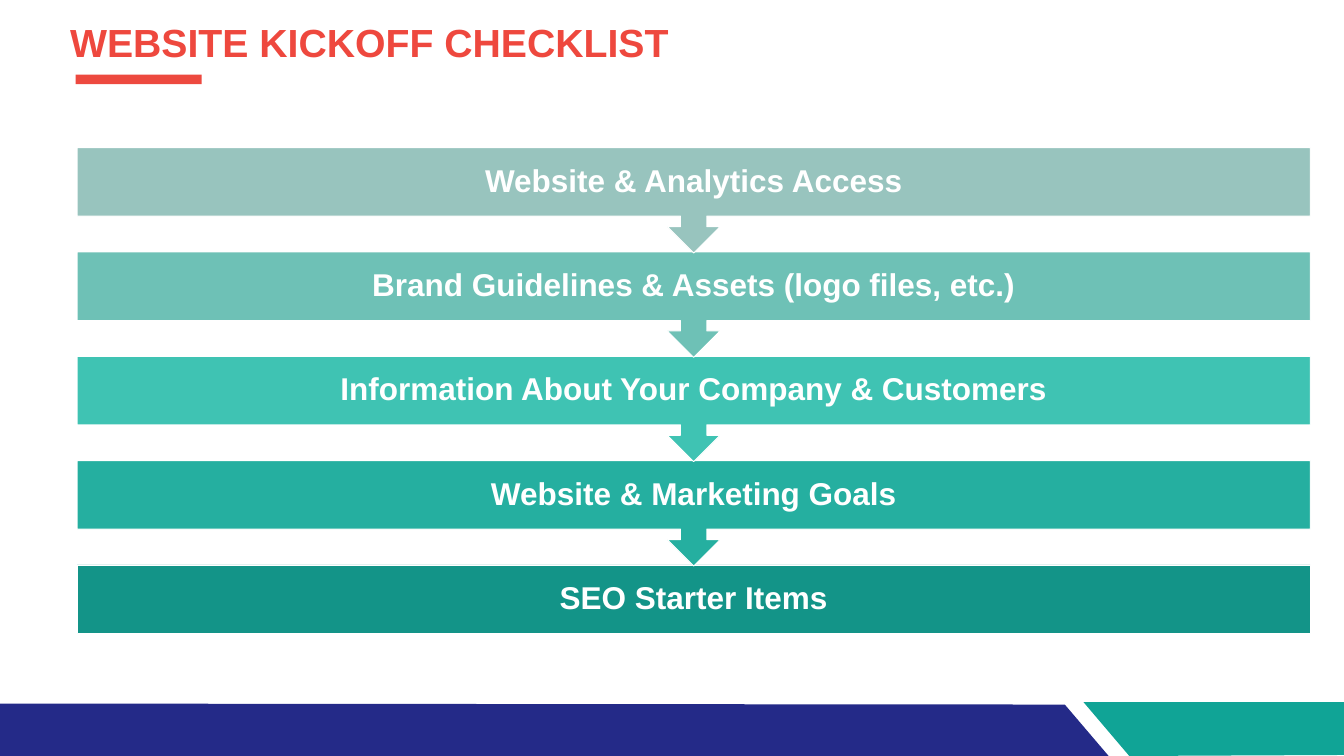
from pptx import Presentation
from pptx import util as u
from pptx.dml.color import RGBColor
from pptx.enum import shapes, text

WHITE = "FFFFFF"
RED = "ED493F"
NAVY = "242A88"
TEAL = "10A496"


def color(hex_value):
    return RGBColor.from_string(hex_value)


class Deck:
    """Holds the style and the current slide."""

    font = "Arial"

    def __init__(self, width, height):
        self.prs = Presentation()
        self.prs.slide_width = u.Inches(width)
        self.prs.slide_height = u.Inches(height)
        self.s = self.prs.slides.add_slide(self.prs.slide_layouts[5])

    def paint(self, sp, fill, line=None):
        sp.shadow.inherit = False
        sp.fill.solid()
        sp.fill.fore_color.rgb = color(fill)
        if line:
            sp.line.color.rgb = color(line)
            sp.line.width = u.Pt(1.25)
        else:
            sp.line.fill.background()

    def label(self, sp, words, size, ink, align):
        tf = sp.text_frame
        tf.text = words
        tf.word_wrap = True
        tf.auto_size = text.MSO_AUTO_SIZE.NONE
        tf.vertical_anchor = text.MSO_ANCHOR.MIDDLE
        p = tf.paragraphs[0]
        p.alignment = align
        p.line_spacing = 0.9
        r = p.runs[0]
        r.font.name = self.font
        r.font.size = u.Pt(size)
        r.font.bold = True
        r.font.color.rgb = color(ink)

    def title(self, words, left, top, width, height):
        sp = self.s.shapes.title
        sp.left, sp.top = u.Inches(left), u.Inches(top)
        sp.width, sp.height = u.Inches(width), u.Inches(height)
        self.label(sp, words, 56, "EE483E", text.PP_ALIGN.LEFT)
        sp.text_frame.margin_left = 0

    def shape(self, kind, left, top, width, height, fill, line=None):
        box = [u.Inches(v) for v in (left, top, width, height)]
        sp = self.s.shapes.add_shape(kind, *box)
        self.paint(sp, fill, line)
        return sp

    def polygon(self, points, fill):
        start, *rest = [(u.Inches(x), u.Inches(y)) for x, y in points]
        builder = self.s.shapes.build_freeform(*start)
        builder.add_line_segments(rest, close=True)
        self.paint(builder.convert_to_shape(), fill)

    def step(self, words, top, height, fill, kind):
        sp = self.shape(kind, 1.53, top, 24.47, height, fill, WHITE)
        self.label(sp, words, 45, WHITE, text.PP_ALIGN.CENTER)


def main():
    deck = Deck(26.67, 15)

    # Footer bands
    deck.polygon([(0, 13.96), (21.13, 13.98), (22, 15), (0, 15)], NAVY)
    deck.polygon([(21.5, 13.93), (26.67, 13.93), (26.67, 14.98), (22.41, 15)], TEAL)

    # Title and its underline
    deck.title("WEBSITE KICKOFF CHECKLIST", 1.39, 0.42, 22.78, 0.92)
    deck.shape(shapes.MSO_SHAPE.RECTANGLE, 1.5, 1.48, 2.5, 0.19, RED)

    # Checklist steps, stacked from the bottom so each arrow overlaps the next bar
    steps = [
        ("Website & Analytics Access", "98C4BE"),
        ("Brand Guidelines & Assets (logo files, etc.)", "6EC1B6"),
        ("Information About Your Company & Customers", "3FC3B3"),
        ("Website & Marketing Goals", "25AFA0"),
        ("SEO Starter Items", "139488"),
    ]
    first_top, pitch = 2.93, 2.07
    last = len(steps) - 1
    for i, (words, fill) in reversed(list(enumerate(steps))):
        if i == last:
            kind, height = shapes.MSO_SHAPE.RECTANGLE, 1.36
        else:
            kind, height = shapes.MSO_SHAPE.DOWN_ARROW_CALLOUT, 2.09
        deck.step(words, first_top + i * pitch, height, fill, kind)

    deck.prs.save("out.pptx")


if __name__ == "__main__":
    main()
